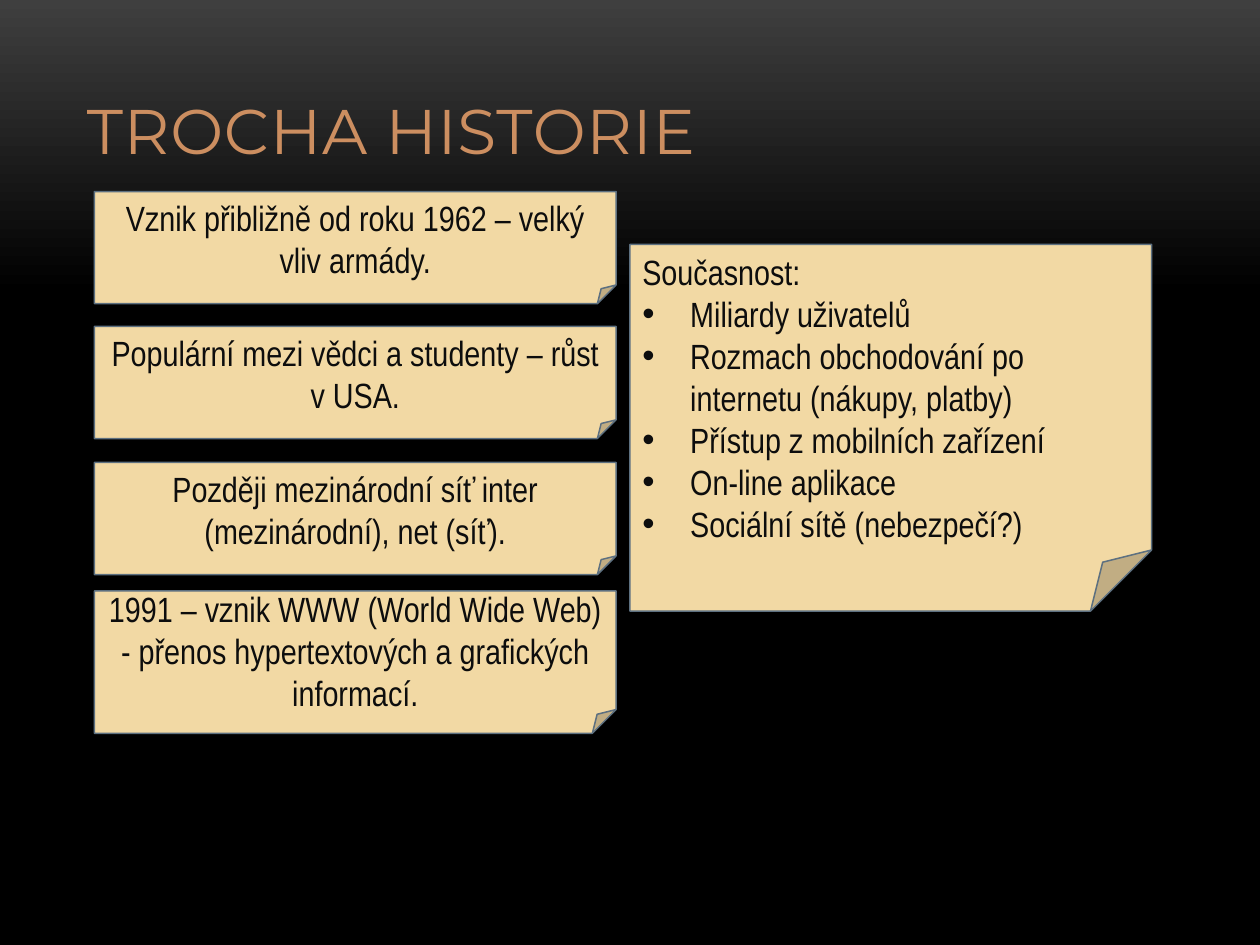
from dataclasses import dataclass

from lxml import etree
from pptx import Presentation
from pptx import util as u
from pptx.dml.color import RGBColor
from pptx.enum import shapes, text
from pptx.oxml.ns import qn


@dataclass(frozen=True)
class Theme:
    """Colours, fonts and type sizes of the deck."""
    top: str = "3F3F3F"
    base: str = "000000"
    title: str = "CC8E60"
    note: str = "F2D9A4"
    edge: str = "5D7080"
    ink: str = "0D0D0D"
    title_font: str = "Montserrat"
    body_font: str = "Arial Narrow"
    title_size: int = 36
    body_size: int = 20
    edge_width: float = 0.85


class SlideBuilder:
    """Draws styled elements on the current slide."""

    def __init__(self, page, theme):
        self.page = page
        self.theme = theme

    def background(self):
        """Fill the page with a gradient that darkens downwards."""
        fill = self.page.background.fill
        fill.gradient()
        fill.gradient_angle = 270
        stops = ((0, self.theme.top), (0.31, self.theme.base))
        for stop, (position, colour) in zip(fill.gradient_stops, stops):
            stop.position = position
            stop.color.rgb = RGBColor.from_string(colour)

    def add_span(self, para, words, font, size, colour):
        """Add a formatted run to a paragraph and return it."""
        span = para.add_run()
        span.text = words
        for name, value in {"name": font, "size": u.Pt(size)}.items():
            setattr(span.font, name, value)
        span.font.color.rgb = RGBColor.from_string(colour)
        return span

    def title(self, words, *place):
        """Place and format the title placeholder."""
        box = self.page.shapes.title
        for name, value in zip(("left", "top", "width", "height"), place):
            setattr(box, name, u.Inches(value))
        frame = box.text_frame
        settings = {"vertical_anchor": text.MSO_ANCHOR.BOTTOM,
                    "auto_size": text.MSO_AUTO_SIZE.NONE, "word_wrap": True}
        for name, value in settings.items():
            setattr(frame, name, value)
        para = frame.paragraphs[0]
        para.alignment = text.PP_ALIGN.LEFT
        theme = self.theme
        span = self.add_span(para, words, theme.title_font, theme.title_size, theme.title)
        span._r.get_or_add_rPr().set("spc", "50")

    def bullet(self, para):
        """Give a paragraph a hanging bullet."""
        props = para._p.get_or_add_pPr()
        indent = u.Inches(0.38)
        props.set("marL", str(indent))
        props.set("indent", str(-indent))
        etree.SubElement(props, qn("a:buFont")).set("typeface", "Arial")
        etree.SubElement(props, qn("a:buChar")).set("char", "•")

    def note(self, place, heading, items=(), align=text.PP_ALIGN.CENTER):
        """Add a folded note with a heading and optional bullets."""
        theme = self.theme
        box = self.page.shapes.add_shape(
            shapes.MSO_SHAPE.FOLDED_CORNER, *(u.Inches(value) for value in place))
        box.shadow.inherit = False
        box.fill.solid()
        box.fill.fore_color.rgb = RGBColor.from_string(theme.note)
        box.line.color.rgb = RGBColor.from_string(theme.edge)
        box.line.width = u.Pt(theme.edge_width)
        frame = box.text_frame
        frame.word_wrap = True
        frame.vertical_anchor = text.MSO_ANCHOR.MIDDLE
        for index, words in enumerate((heading, *items)):
            para = frame.add_paragraph() if index else frame.paragraphs[0]
            para.alignment = align
            if index:
                self.bullet(para)
            self.add_span(para, words, theme.body_font, theme.body_size, theme.ink)


MILESTONES = (
    (1.52, 0.89, "Vznik přibližně od roku 1962 – velký vliv armády."),
    (2.59, 0.89, "Populární mezi vědci a studenty – růst v USA."),
    (3.67, 0.89, "Později mezinárodní síť inter (mezinárodní), net (síť)."),
    (4.69, 1.13, "1991 – vznik WWW (World Wide Web) - přenos hypertextových "
                 "a grafických informací."),
)
PRESENT = (
    "Miliardy uživatelů",
    "Rozmach obchodování po internetu (nákupy, platby)",
    "Přístup z mobilních zařízení",
    "On-line aplikace",
    "Sociální sítě (nebezpečí?)",
)
NOTE_WIDTH = 4.14


def main():
    """Build the history slide and save it."""
    deck = Presentation()
    deck.slide_width, deck.slide_height = u.Inches(10), u.Inches(7.5)
    builder = SlideBuilder(deck.slides.add_slide(deck.slide_layouts[5]), Theme())
    builder.background()
    builder.title("TROCHA HISTORIE", 0.59, 0.13, 8.73, 1.25)
    for top, height, words in MILESTONES:
        builder.note((0.75, top, NOTE_WIDTH, height), words)
    builder.note((5, 1.94, NOTE_WIDTH, 2.91), "Současnost:", PRESENT, text.PP_ALIGN.LEFT)
    deck.save("out.pptx")


if __name__ == "__main__":
    main()
